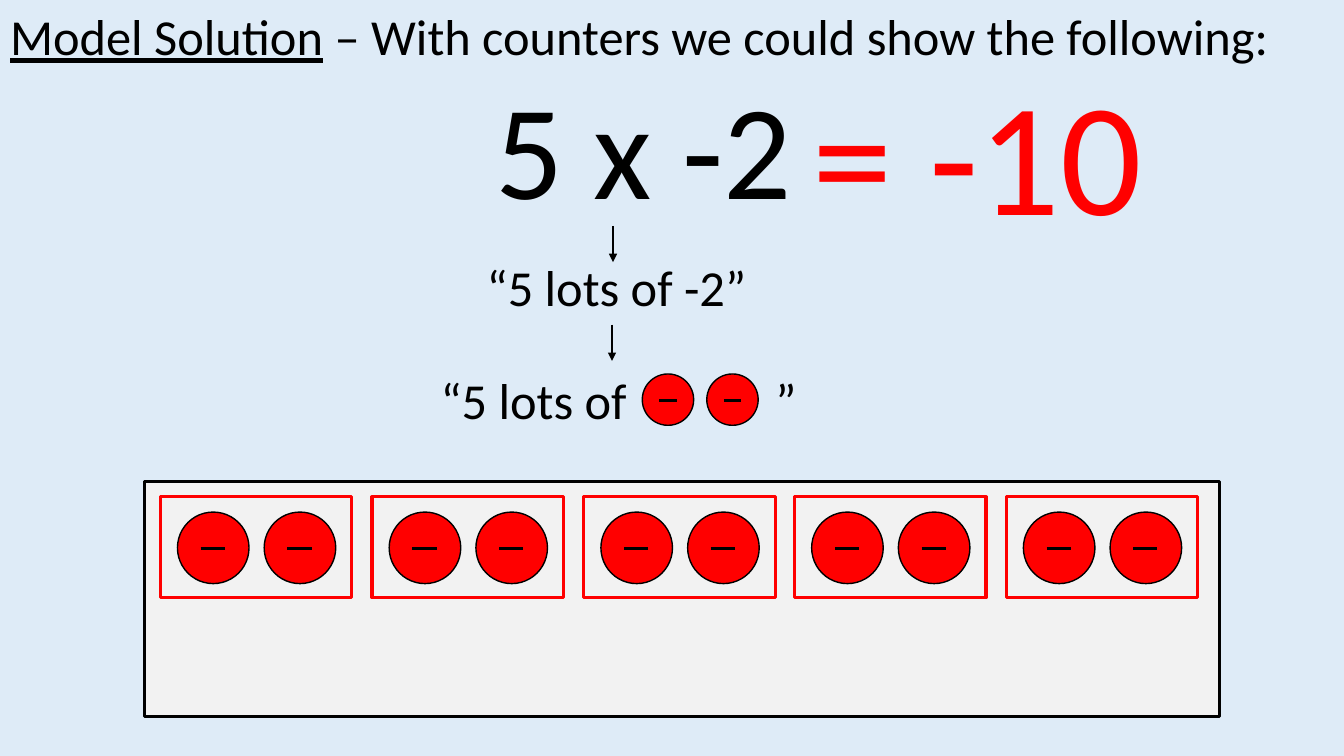
from dataclasses import dataclass

import pptx
import pptx.dml.color
import pptx.enum.shapes
import pptx.enum.text
import pptx.oxml
import pptx.oxml.ns
import pptx.util
from lxml import etree

PX = 9144  # EMU per px, at 100 px to the inch
BLACK, RED, PANEL, BACKGROUND = "000000", "FF0000", "F2F2F2", "DEEBF7"
SHAPE = pptx.enum.shapes.MSO_SHAPE
ALIGN = pptx.enum.text.PP_ALIGN


@dataclass(frozen=True)
class Box:
    left: int
    top: int
    width: int
    height: int

    def emu(self) -> list[int]:
        return [side * PX for side in (self.left, self.top, self.width, self.height)]


@dataclass(frozen=True)
class Label:
    text: str
    box: Box
    size: int
    color: str = BLACK


@dataclass(frozen=True)
class Counter:
    left: int
    top: int
    diameter: int


def rgb(color: str) -> pptx.dml.color.RGBColor:
    return pptx.dml.color.RGBColor.from_string(color)


def format_runs(paragraph, size: int, color: str = BLACK) -> None:
    for run in paragraph.runs:
        run.font.name = "Calibri"
        run.font.size = pptx.util.Pt(size)
        run.font.color.rgb = rgb(color)


def fit_frame(frame) -> None:
    frame.word_wrap = True
    frame.auto_size = pptx.enum.text.MSO_AUTO_SIZE.SHAPE_TO_FIT_TEXT
    frame.vertical_anchor = pptx.enum.text.MSO_ANCHOR.TOP


def add_label(shapes, label: Label):
    frame = shapes.add_textbox(*label.box.emu()).text_frame
    fit_frame(frame)
    frame.text = label.text
    paragraph = frame.paragraphs[0]
    paragraph.alignment = ALIGN.CENTER
    format_runs(paragraph, label.size, label.color)
    return frame


def add_outline(shapes, kind, box: Box, fill: str | None, line: str, weight: float) -> None:
    shape = shapes.add_shape(kind, *box.emu())
    shape.shadow.inherit = False
    if fill:
        shape.fill.solid()
        shape.fill.fore_color.rgb = rgb(fill)
    else:
        shape.fill.background()
    shape.line.color.rgb = rgb(line)
    shape.line.width = pptx.util.Pt(weight)


def add_line(shapes, x1: int, y1: int, x2: int, y2: int, weight: float, arrow: bool = False) -> None:
    line = shapes.add_connector(pptx.enum.shapes.MSO_CONNECTOR.STRAIGHT,
                                x1 * PX, y1 * PX, x2 * PX, y2 * PX)
    line.line.color.rgb = rgb(BLACK)
    line.line.width = pptx.util.Pt(weight)
    if arrow:
        tail = etree.SubElement(line.line._get_or_add_ln(), pptx.oxml.ns.qn("a:tailEnd"))
        tail.set("type", "triangle")
    etree.SubElement(line._element.spPr, pptx.oxml.ns.qn("a:effectLst"))


def add_counter(slide, counter: Counter) -> None:
    shapes = slide.shapes.add_group_shape().shapes
    size = counter.diameter
    add_outline(shapes, SHAPE.OVAL, Box(counter.left, counter.top, size, size), RED, BLACK, 1)
    middle = counter.top + round(size / 2)
    add_line(shapes, counter.left + size // 3, middle,
             counter.left + size * 2 // 3, middle, 2.25)


def add_title(slide) -> None:
    title = slide.shapes.title
    title.left, title.top, title.width, title.height = Box(0, 0, 1276, 232).emu()
    frame = title.text_frame
    fit_frame(frame)
    heading, product = frame.paragraphs[0], frame.add_paragraph()
    heading.alignment, product.alignment = ALIGN.LEFT, ALIGN.CENTER
    for text in ("Model Solution", " – With counters we could show the following:"):
        heading.add_run().text = text
    heading.runs[0].font.underline = True
    product.text = "5 x -2"
    format_runs(heading, 36)
    format_runs(product, 96)


def add_counter_phrase(shapes) -> None:
    frame = add_label(shapes, Label("“5 lots of\t”", Box(196, 361, 831, 71), 36))
    frame.margin_left = 241 * PX
    paragraph = frame.paragraphs[0]
    paragraph.alignment = ALIGN.LEFT
    tabs = etree.SubElement(paragraph._p.get_or_add_pPr(), pptx.oxml.ns.qn("a:tabLst"))
    tab = etree.SubElement(tabs, pptx.oxml.ns.qn("a:tab"))
    tab.set("pos", str(332 * PX))
    tab.set("algn", "l")


def main() -> None:
    deck = pptx.Presentation()
    deck.slide_width, deck.slide_height = 1333 * PX, 750 * PX
    slide = deck.slides.add_slide(deck.slide_layouts[5])
    slide.background.fill.solid()
    slide.background.fill.fore_color.rgb = rgb(BACKGROUND)

    # Calculation and its answer
    add_title(slide)
    add_label(slide.shapes, Label("= -10", Box(765, 49, 409, 204), 115, RED))

    # Reading the calculation in words, then in counters
    add_line(slide.shapes, 608, 224, 608, 260, 1.5, arrow=True)
    add_label(slide.shapes, Label("“5 lots of -2”", Box(196, 249, 831, 71), 36))
    add_line(slide.shapes, 607, 322, 607, 358, 1.5, arrow=True)
    add_counter_phrase(slide.shapes)
    for left in (637, 701):
        add_counter(slide, Counter(left, 371, 51))

    # Panel with five lots of two counters
    add_outline(slide.shapes, SHAPE.RECTANGLE, Box(143, 478, 1067, 233), PANEL, BLACK, 2.25)
    first_lot, last_lot, lots = 159, 998, 5
    for lot in range(lots):
        left = first_lot + round(lot * (last_lot - first_lot) / (lots - 1))
        add_outline(slide.shapes, SHAPE.RECTANGLE, Box(left, 493, 190, 100), None, RED, 2.25)
        for offset in (17, 103):
            add_counter(slide, Counter(left + offset, 508, 71))

    deck.save("out.pptx")


if __name__ == "__main__":
    main()
